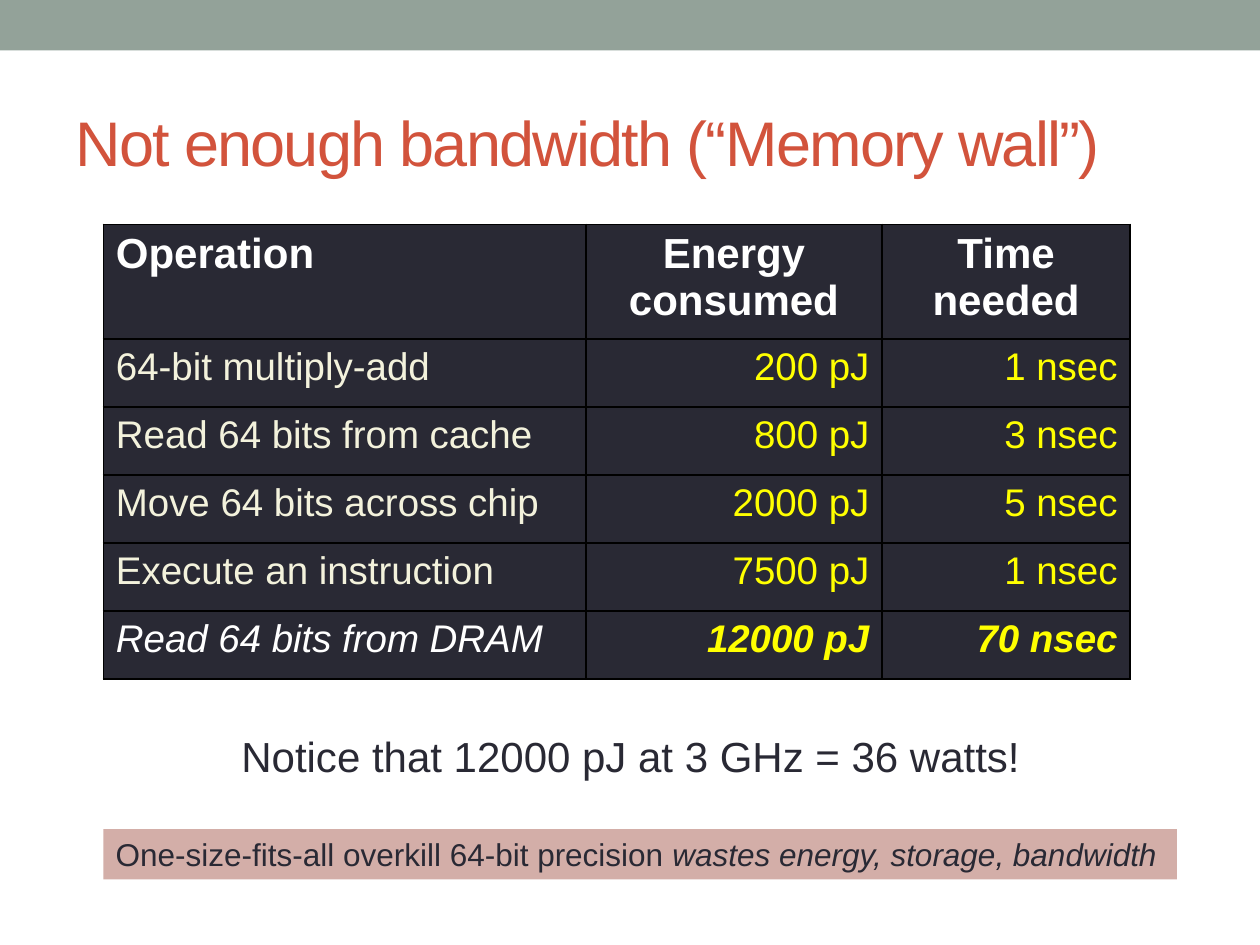
import pptx
import pptx.util
import pptx.dml.color
import pptx.enum.shapes
import pptx.enum.text
import pptx.oxml
import pptx.oxml.ns

Inches = pptx.util.Inches
ALIGN = pptx.enum.text.PP_ALIGN
ANCHOR = pptx.enum.text.MSO_ANCHOR

# Content
TITLE = "Not enough bandwidth (“Memory wall”)"
HEADER = ["Operation", "Energy\nconsumed", "Time\nneeded"]
OPERATIONS = [
    ["64-bit multiply-add", "200 pJ", "1 nsec"],
    ["Read 64 bits from cache", "800 pJ", "3 nsec"],
    ["Move 64 bits across chip", "2000 pJ", "5 nsec"],
    ["Execute an instruction", "7500 pJ", "1 nsec"],
    ["Read 64 bits from DRAM", "12000 pJ", "70 nsec"],
]
NOTICE = "Notice that 12000 pJ at 3 GHz = 36 watts!"
CLAIM = "One-size-fits-all overkill 64-bit precision "
CONSEQUENCE = "wastes energy, storage, bandwidth"

# Formats
COLORS = {
    "band": "93A299", "title": "D2533C", "dark": "292934", "white": "FFFFFF",
    "cream": "F3F2DC", "yellow": "FFFF00", "claim": "D3AEA8", "border": "000000",
}
COLUMN_WIDTHS = [3.83, 2.35, 1.97]
HEADER_HEIGHT, ROW_HEIGHT = 0.91, 0.54
TABLE_LEFT, TABLE_TOP = 0.82, 1.78


def color(name):
    return pptx.dml.color.RGBColor.from_string(COLORS[name])


def box(left, top, width, height):
    return [Inches(value) for value in (left, top, width, height)]


def add_run(paragraph, text, color_name, size, **formats):
    run = paragraph.add_run()
    run.text = text
    formats = {"name": "Arial", "size": pptx.util.Pt(size), **formats}
    for name, value in formats.items():
        setattr(run.font, name, value)
    run.font.color.rgb = color(color_name)
    return run


def set_frame(frame, **formats):
    for name, value in formats.items():
        setattr(frame, name, value)
    return frame.paragraphs[0]


def add_rectangle(slide, place, color_name):
    shape = slide.shapes.add_shape(pptx.enum.shapes.MSO_SHAPE.RECTANGLE, *place)
    shape.shadow.inherit = False
    shape.fill.solid()
    shape.fill.fore_color.rgb = color(color_name)
    shape.line.fill.background()
    return shape


def add_borders(cell):
    properties = cell._tc.get_or_add_tcPr()
    for position, side in enumerate(("lnL", "lnR", "lnT", "lnB")):
        properties.insert(position, pptx.oxml.parse_xml(
            f'<a:{side} {pptx.oxml.ns.nsdecls("a")} w="12700"><a:solidFill>'
            f'<a:srgbClr val="{COLORS["border"]}"/></a:solidFill></a:{side}>'))


def cell_format(row, column):
    """Colour, size and style of the text in one cell."""
    if row == 0:
        return {"color_name": "white", "size": 24, "bold": True}
    last = row == len(OPERATIONS)
    label_color = "white" if last else "cream"
    return {"color_name": "yellow" if column else label_color, "size": 22,
            "bold": last and column > 0, "italic": last}


def add_operations_table(slide):
    rows = [HEADER] + OPERATIONS
    heights = [HEADER_HEIGHT] + [ROW_HEIGHT] * len(OPERATIONS)
    table = slide.shapes.add_table(
        len(rows), len(HEADER),
        *box(TABLE_LEFT, TABLE_TOP, sum(COLUMN_WIDTHS), sum(heights))).table
    for column, width in zip(table.columns, COLUMN_WIDTHS):
        column.width = Inches(width)
    for row, height in zip(table.rows, heights):
        row.height = Inches(height)
    for row, texts in enumerate(rows):
        for column, text in enumerate(texts):
            cell = table.cell(row, column)
            cell.fill.solid()
            cell.fill.fore_color.rgb = color("dark")
            add_borders(cell)
            value_alignment = ALIGN.RIGHT if row else ALIGN.CENTER
            for index, line in enumerate(text.split("\n")):
                frame = cell.text_frame
                paragraph = frame.add_paragraph() if index else frame.paragraphs[0]
                paragraph.alignment = value_alignment if column else ALIGN.LEFT
                add_run(paragraph, line, **cell_format(row, column))


def main():
    presentation = pptx.Presentation()
    presentation.slide_width, presentation.slide_height = Inches(10), Inches(7.5)
    slide = presentation.slides.add_slide(presentation.slide_layouts[5])

    # Top band
    add_rectangle(slide, box(0, 0, 10, 0.4), "band")

    # Title
    title = slide.shapes.title
    title.left, title.top, title.width, title.height = box(0.5, 0.58, 9.4, 1.08)
    paragraph = set_frame(title.text_frame, vertical_anchor=ANCHOR.MIDDLE,
                          auto_size=pptx.enum.text.MSO_AUTO_SIZE.NONE)
    paragraph.alignment = ALIGN.LEFT
    run = add_run(paragraph, TITLE, "title", 36)
    run._r.get_or_add_rPr().set("spc", "-100")

    add_operations_table(slide)

    # Remark below the table
    notice = slide.shapes.add_textbox(*box(1.6, 5.75, 6.81, 0.5))
    paragraph = set_frame(notice.text_frame, word_wrap=True)
    paragraph.alignment = ALIGN.CENTER
    add_run(paragraph, NOTICE, "dark", 24)

    # Highlighted conclusion
    conclusion = add_rectangle(slide, box(TABLE_LEFT, 6.58, 8.52, 0.4), "claim")
    paragraph = set_frame(conclusion.text_frame, word_wrap=False,
                          vertical_anchor=ANCHOR.TOP)
    paragraph.alignment = ALIGN.LEFT
    add_run(paragraph, CLAIM, "dark", 18)
    add_run(paragraph, CONSEQUENCE, "dark", 18, italic=True)

    presentation.save("out.pptx")


if __name__ == "__main__":
    main()
